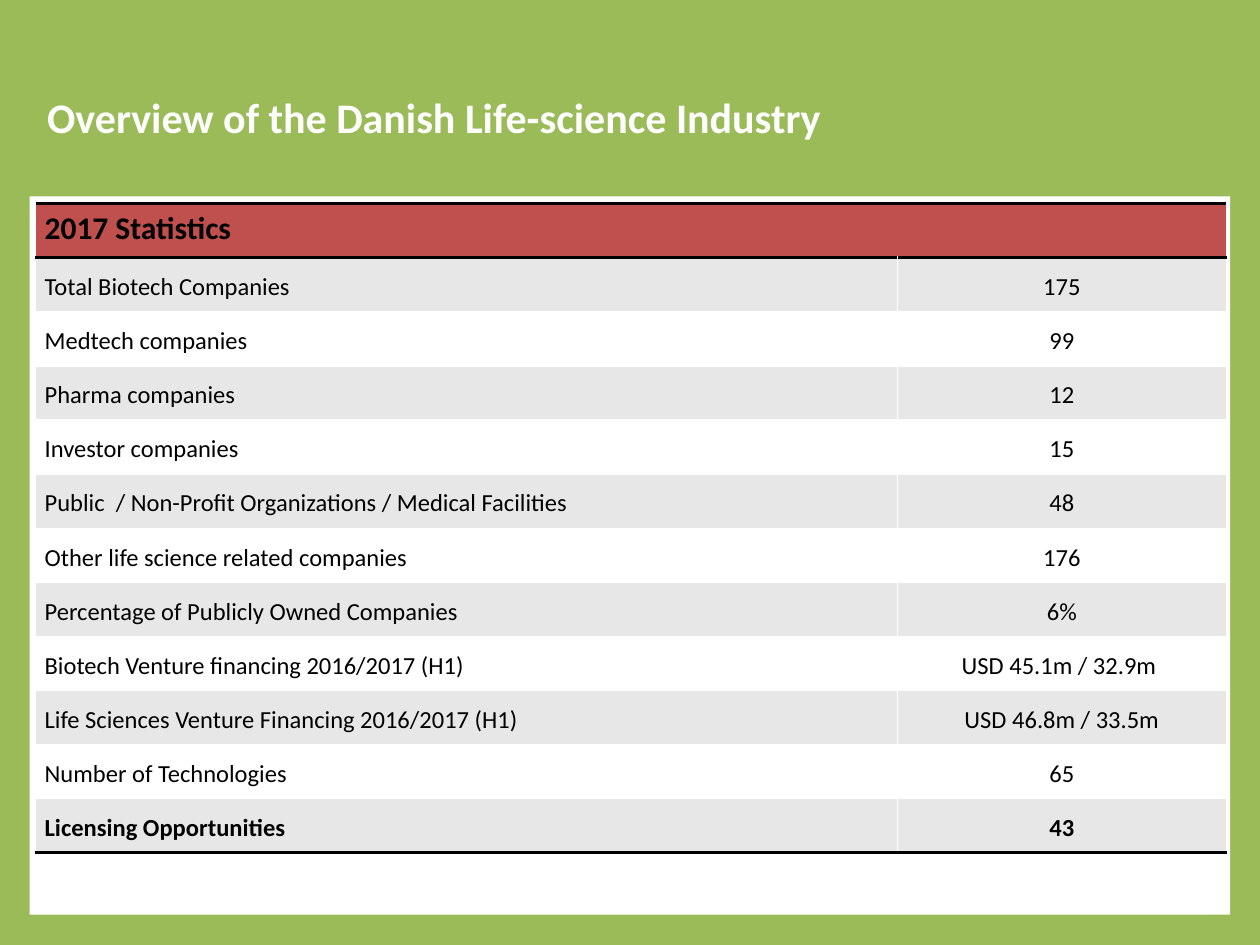
from lxml import etree
from pptx import Presentation
from pptx.dml.color import RGBColor
from pptx.enum import shapes, text
from pptx.oxml import ns
from pptx.util import Cm, Pt

FONT = "Calibri"
GREEN, WHITE, BLACK, RED, GRAY = "9BBB59", "FFFFFF", "000000", "C0504D", "E7E7E7"
HEADING = "2017 Statistics"
STATISTICS = [
    ("Total Biotech Companies", "175"),
    ("Medtech companies", "99"),
    ("Pharma companies", "12"),
    ("Investor companies", "15"),
    ("Public  / Non-Profit Organizations / Medical Facilities", "48"),
    ("Other life science related companies", "176"),
    ("Percentage of Publicly Owned Companies", "6%"),
    ("Biotech Venture financing 2016/2017 (H1)", "USD 45.1m / 32.9m "),
    ("Life Sciences Venture Financing 2016/2017 (H1)", "USD 46.8m / 33.5m"),
    ("Number of Technologies", "65"),
    ("Licensing Opportunities", "43"),
]


def color(value):
    return RGBColor.from_string(value)


def set_attributes(target, values):
    for name, value in values.items():
        setattr(target, name, value)


def set_fill(fill, value):
    fill.solid()
    fill.fore_color.rgb = color(value)


def write(paragraph, words, size, bold, ink):
    paragraph.text = words
    set_attributes(paragraph.font, {"name": FONT, "size": Pt(size), "bold": bold})
    paragraph.font.color.rgb = color(ink)


def add_border(cell, side):
    line = etree.Element(ns.qn(f"a:ln{side}"), w=str(Pt(2)))
    solid = etree.SubElement(line, ns.qn("a:solidFill"))
    etree.SubElement(solid, ns.qn("a:srgbClr"), val=BLACK)
    cell._tc.get_or_add_tcPr().insert(0, line)


def fill_cell(cell, words, background, size=14, bold=False, align=text.PP_ALIGN.LEFT,
              anchor=text.MSO_ANCHOR.MIDDLE):
    set_attributes(cell, {
        "margin_left": Cm(0.18), "margin_right": Cm(0.18),
        "margin_top": 0, "margin_bottom": 0, "vertical_anchor": anchor,
    })
    set_fill(cell.fill, background)
    paragraph = cell.text_frame.paragraphs[0]
    set_attributes(paragraph, {"alignment": align, "line_spacing": 1.15})
    write(paragraph, words, size, bold, BLACK)


def add_title(slide, left, top, width, height):
    title = slide.shapes.add_textbox(Cm(left), Cm(top), Cm(width), Cm(height))
    set_attributes(title.text_frame, {
        "word_wrap": True, "vertical_anchor": text.MSO_ANCHOR.MIDDLE,
    })
    write(title.text_frame.paragraphs[0], "Overview of the Danish Life-science Industry",
          24, True, WHITE)


def add_statistics(slide, left, top, width, height):
    row_count = len(STATISTICS) + 1
    frame = slide.shapes.add_table(row_count, 2, Cm(left), Cm(top), Cm(width), Cm(height))
    table = frame.table
    value_width = 6.63
    table.columns[0].width = Cm(width - value_width)
    table.columns[1].width = Cm(value_width)
    for row in table.rows:
        row.height = Cm(height / row_count)

    table.cell(0, 0).merge(table.cell(0, 1))
    fill_cell(table.cell(0, 0), HEADING, RED, 18, True, anchor=text.MSO_ANCHOR.TOP)
    for index, (label, value) in enumerate(STATISTICS, 1):
        background = GRAY if index % 2 else WHITE
        bold = index == len(STATISTICS)
        fill_cell(table.cell(index, 0), label, background, bold=bold)
        fill_cell(table.cell(index, 1), value, background, bold=bold,
                  align=text.PP_ALIGN.CENTER)
    for column in range(2):
        for row, side in ((0, "B"), (0, "T"), (row_count - 1, "B")):
            add_border(table.cell(row, column), side)


def add_panel(slide, left, top, width, height):
    panel = slide.shapes.add_shape(shapes.MSO_SHAPE.RECTANGLE,
                                   Cm(left), Cm(top), Cm(width), Cm(height))
    panel.shadow.inherit = False
    set_fill(panel.fill, WHITE)
    panel.line.fill.background()
    add_statistics(slide, left + 0.12, top + 0.15, width - 0.2, 13.08)


def main():
    presentation = Presentation()
    set_attributes(presentation, {"slide_width": Cm(25.4), "slide_height": Cm(19.05)})
    slide = presentation.slides.add_slide(presentation.slide_layouts[6])
    set_fill(slide.background.fill, GREEN)
    add_panel(slide, 0.6, 3.96, 24.2, 14.48)
    add_title(slide, 0.7, 0.76, 22.86, 3.18)
    presentation.save("out.pptx")


if __name__ == "__main__":
    main()
